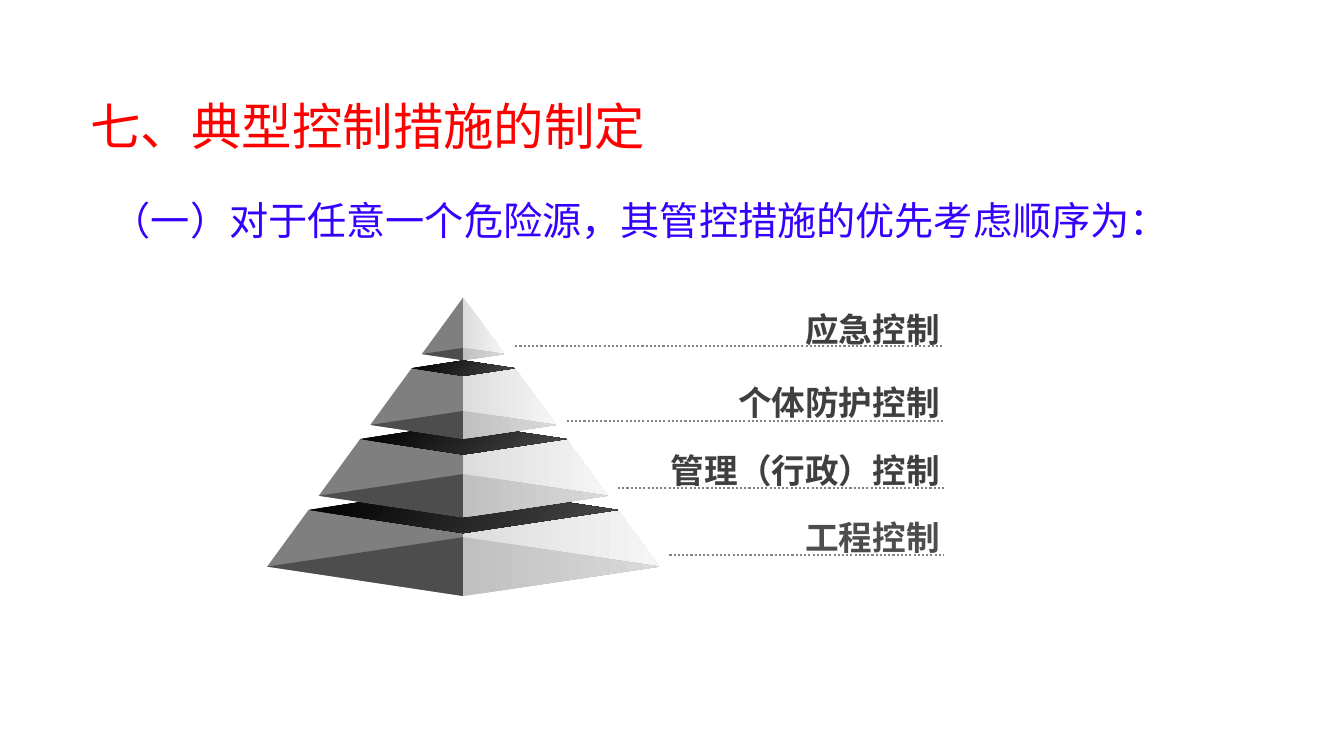
from lxml import etree
from pptx import Presentation
from pptx.dml.color import RGBColor
from pptx.enum.dml import MSO_LINE
from pptx.enum.shapes import MSO_CONNECTOR
from pptx.enum.text import MSO_ANCHOR, MSO_AUTO_SIZE, PP_ALIGN
from pptx.oxml.ns import qn
from pptx.util import Inches, Pt

STRAIGHT = MSO_CONNECTOR.STRAIGHT
DOTTED = MSO_LINE.ROUND_DOT
TOP = MSO_ANCHOR.TOP
GROW = MSO_AUTO_SIZE.SHAPE_TO_FIT_TEXT
LEFT, RIGHT = PP_ALIGN.LEFT, PP_ALIGN.RIGHT

CJK_FONT = "Noto Sans CJK SC"
LEFT_FACE, RIGHT_FACE = ["7F7F7F"], ["DDDDDD", "F5F5F5"]
LEFT_BASE, RIGHT_BASE = ["4D4D4D"], ["C0C0C0", "D9D9D9"]
CAP = ["000000", "4A4A4A"]
TIER_STEP = 0.1315
DEPTH = 0.15

LABELS = [
    ("应急控制", 2.07, 2.94, 0.41, 3.43, "3F3F3F"),
    ("个体防护控制", 2.32, 3.67, 0.66, 4.18, "3F3F3F"),
    ("管理（行政）控制", 3.28, 4.34, 0.41, 4.84, "3F3F3F"),
    ("工程控制", 1.84, 5.01, 0.66, 5.51, "4D4D4D"),
]


def rgb(value):
    return RGBColor.from_string(value)


def inches(*lengths):
    return [Inches(length) for length in lengths]


def add_text(slide, box, wording, size, color, font=CJK_FONT, bold=False,
             align=LEFT, insets=(0.1, 0.05, 0.1, 0.05)):
    frame = slide.shapes.add_textbox(*box).text_frame
    frame.word_wrap = True
    frame.auto_size = GROW
    frame.vertical_anchor = TOP
    (frame.margin_left, frame.margin_top,
     frame.margin_right, frame.margin_bottom) = inches(*insets)
    frame.text = wording
    paragraph = frame.paragraphs[0]
    paragraph.alignment = align
    run = paragraph.runs[0]
    run.font.size = Pt(size)
    run.font.bold = bold
    run.font.color.rgb = rgb(color)
    run.font.name = font
    east_asian = etree.SubElement(run.font._element, qn("a:ea"))
    east_asian.set("typeface", CJK_FONT)


def add_facet(slide, points, colors, angle=0):
    points = [(round(x), round(y)) for x, y in points]
    builder = slide.shapes.build_freeform(*points[0])
    builder.add_line_segments(points[1:], close=True)
    facet = builder.convert_to_shape()
    facet.shadow.inherit = False
    facet.line.fill.background()
    if len(colors) == 1:
        facet.fill.solid()
        facet.fill.fore_color.rgb = rgb(colors[0])
        return
    facet.fill.gradient()
    facet.fill.gradient_angle = angle
    for stop, color in zip(facet.fill.gradient_stops, colors):
        stop.color.rgb = rgb(color)


def add_tier(slide, center, rim_y, rim_half, base_y, base_half, notch_half):
    rim_front = rim_y + DEPTH * rim_half
    base_rise = DEPTH * base_half
    tip = (center, base_y + base_rise)
    for side, face, base in ((-1, LEFT_FACE, LEFT_BASE), (1, RIGHT_FACE, RIGHT_BASE)):
        corner = (center + side * base_half, base_y)
        rim = (center + side * rim_half, rim_y)
        add_facet(slide, [rim, corner, tip, (center, rim_front)], face)
        add_facet(slide, [corner, (center, base_y - base_rise), tip], base)
    if rim_half:
        notch_y = rim_y - DEPTH * (rim_half - notch_half)
        add_facet(slide, [(center - rim_half, rim_y), (center - notch_half, notch_y),
                          (center, notch_y + DEPTH * notch_half),
                          (center + notch_half, notch_y), (center + rim_half, rim_y),
                          (center, rim_front)], CAP, 315)


def add_pyramid(slide, left, top, width, height):
    center = left + width / 2
    half_step = TIER_STEP * width
    tier_height, tier_pitch = 0.19 * height, 0.2375 * height
    last = len(LABELS) - 1
    peak_half = width / 2 - last * half_step
    for tier in range(last, -1, -1):
        rim_y = top + tier * tier_pitch
        add_tier(slide, center, rim_y, tier * half_step, rim_y + tier_height,
                 peak_half + tier * half_step, max(tier - 1, 0) * half_step)


def add_labels(slide, center, step, text_right, rule_right):
    for tier, (wording, width, top, height, rule_y, color) in enumerate(LABELS, 1):
        add_text(slide, inches(text_right - width, top, width, height), wording,
                 24, color, bold=True, align=RIGHT, insets=(0.12, 0.12, 0.09, 0.12))
        rule = slide.shapes.add_connector(
            STRAIGHT, *inches(center + tier * step, rule_y, rule_right, rule_y))
        rule.line.color.rgb = rgb("868282")
        rule.line.width = Pt(1.5)
        rule.line.dash_style = DOTTED
        etree.SubElement(rule._element.spPr, qn("a:effectLst"))


def main():
    deck = Presentation()
    deck.slide_width, deck.slide_height = inches(13.33, 7.5)
    slide = deck.slides.add_slide(deck.slide_layouts[6])
    add_text(slide, inches(1.01, 1.9, 11.22, 0.57),
             "（一）对于任意一个危险源，其管控措施的优先考虑顺序为：", 28, "3600FF")
    add_pyramid(slide, *inches(2.65, 2.95, 3.89, 2.96))
    add_labels(slide, 4.6, 0.51, 9.41, 9.36)
    add_text(slide, inches(0.8, 0.89, 7.65, 0.71), "七、典型控制措施的制定",
             36, "FF0000", font="Arial")
    deck.save("out.pptx")


if __name__ == "__main__":
    main()
